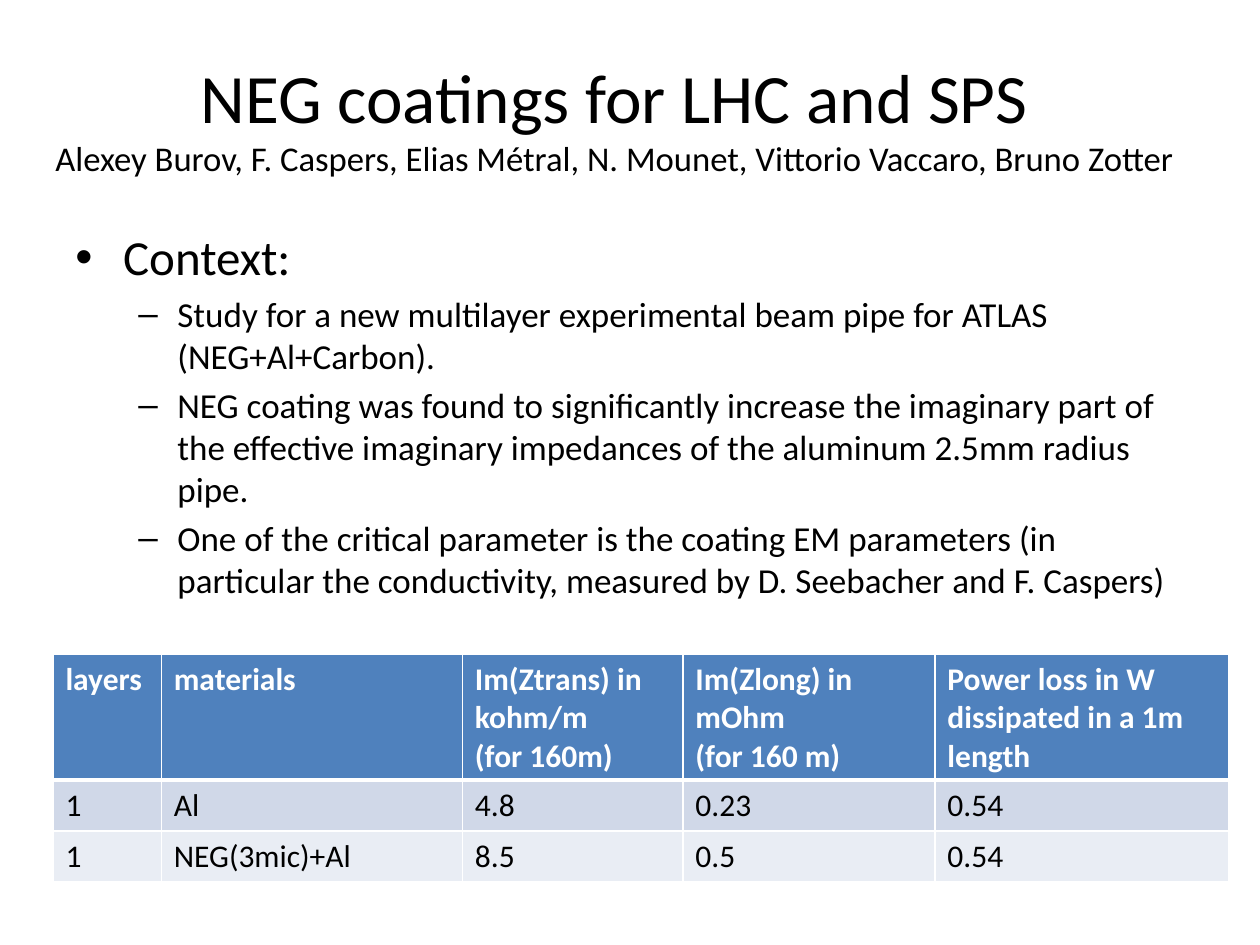
import dataclasses

import pptx
import pptx.dml.color
import pptx.enum.text
import pptx.oxml
import pptx.oxml.ns
import pptx.util

ALIGN = pptx.enum.text.PP_ALIGN
ANCHOR = pptx.enum.text.MSO_ANCHOR


@dataclasses.dataclass(frozen=True)
class Theme:
    font: str = "Calibri"
    ink: str = "000000"
    white: str = "FFFFFF"
    header: str = "4F81BD"
    bands: tuple = ("D0D8E8", "E9EDF4")
    title_size: float = 39.6
    authors_size: float = 19.8
    heading_size: float = 28
    body_size: float = 20
    table_size: float = 18
    thin_line: float = 1
    thick_line: float = 3


def write_text(paragraph, text, *, font, size, color, bold=False, align=None):
    """Add text to a paragraph; each newline becomes a line break."""
    if align is not None:
        paragraph.alignment = align
    for index, line in enumerate(text.split("\n")):
        if index:
            paragraph.add_line_break()
        run = paragraph.add_run()
        run.text = line
        run.font.name = font
        run.font.size = pptx.util.Pt(size)
        run.font.bold = bold
        run.font.color.rgb = pptx.dml.color.RGBColor.from_string(color)


class SlideBuilder:
    """Places elements on a grid of 40 columns by 30 rows."""

    columns, rows = 40, 30

    def __init__(self, presentation, theme):
        self.theme = theme
        self.column = presentation.slide_width / self.columns
        self.row = presentation.slide_height / self.rows
        self.slide = presentation.slides.add_slide(presentation.slide_layouts[6])

    def place(self, left, top, width, height):
        return (round(left * self.column), round(top * self.row),
                round(width * self.column), round(height * self.row))

    def text_frame(self, area, anchor):
        frame = self.slide.shapes.add_textbox(*self.place(*area)).text_frame
        frame.word_wrap = True
        frame.vertical_anchor = anchor
        return frame

    def title(self, area, title, authors):
        theme = self.theme
        paragraph = self.text_frame(area, ANCHOR.MIDDLE).paragraphs[0]
        write_text(paragraph, title, font=theme.font, size=theme.title_size,
                   color=theme.ink, align=ALIGN.CENTER)
        paragraph.add_line_break()
        write_text(paragraph, authors, font=theme.font, size=theme.authors_size,
                   color=theme.ink)

    def bullets(self, area, heading, points):
        theme = self.theme
        frame = self.text_frame(area, ANCHOR.TOP)
        self.bullet(frame.paragraphs[0], heading, theme.heading_size, "•", 0.38, 0.38)
        for point in points:
            paragraph = frame.add_paragraph()
            paragraph.level = 1
            self.bullet(paragraph, point, theme.body_size, "–", 0.81, 0.31)

    def bullet(self, paragraph, text, size, mark, margin, hanging):
        paragraph.space_before = pptx.util.Pt(size * 0.2)
        write_text(paragraph, text, font=self.theme.font, size=size, color=self.theme.ink)
        properties = paragraph._p.get_or_add_pPr()
        properties.set("marL", str(pptx.util.Inches(margin)))
        properties.set("indent", str(-pptx.util.Inches(hanging)))
        namespace = pptx.oxml.ns.nsdecls("a")
        for xml in (f'<a:buFont {namespace} typeface="Arial"/>',
                    f'<a:buChar {namespace} char="{mark}"/>'):
            properties.append(pptx.oxml.parse_xml(xml))

    def table(self, left, top, widths, heights, records):
        area = self.place(left, top, sum(widths), sum(heights))
        table = self.slide.shapes.add_table(len(records), len(widths), *area).table
        for column, width in zip(table.columns, widths):
            column.width = round(width * self.column)
        for row, height in zip(table.rows, heights):
            row.height = round(height * self.row)
        for row_index, record in enumerate(records):
            for column_index, text in enumerate(record):
                self.cell(table.cell(row_index, column_index), text, row_index)

    def cell(self, cell, text, row_index):
        theme = self.theme
        is_header = row_index == 0
        write_text(cell.text_frame.paragraphs[0], text, font=theme.font,
                   size=theme.table_size, bold=is_header,
                   color=theme.white if is_header else theme.ink)
        # The rule between header and body is thicker
        widths = dict.fromkeys("LRTB", theme.thin_line)
        if row_index < 2:
            widths["B" if is_header else "T"] = theme.thick_line
        properties = cell._tc.get_or_add_tcPr()
        for side, width in widths.items():
            properties.append(pptx.oxml.parse_xml(
                f'<a:ln{side} {pptx.oxml.ns.nsdecls("a")} w="{pptx.util.Pt(width)}">'
                f'<a:solidFill><a:srgbClr val="{theme.white}"/></a:solidFill></a:ln{side}>'))
        fill = theme.header if is_header else theme.bands[(row_index - 1) % 2]
        cell.fill.solid()
        cell.fill.fore_color.rgb = pptx.dml.color.RGBColor.from_string(fill)


def main():
    presentation = pptx.Presentation()
    presentation.slide_width = pptx.util.Inches(10)
    presentation.slide_height = pptx.util.Inches(7.5)
    builder = SlideBuilder(presentation, Theme())

    # Title and authors
    builder.title(
        (1, 1.2, 37, 5), "NEG coatings for LHC and SPS",
        "Alexey Burov, F. Caspers, Elias Métral, N. Mounet, Vittorio Vaccaro, Bruno Zotter")

    # Context
    builder.bullets((2, 7, 36, 19.8), "Context:", [
        "Study for a new multilayer experimental beam pipe for ATLAS (NEG+Al+Carbon).",
        "NEG coating was found to significantly increase the imaginary part of the "
        "effective imaginary impedances of the aluminum 2.5mm radius pipe.",
        "One of the critical parameter is the coating EM parameters (in particular the "
        "conductivity, measured by D. Seebacher and F. Caspers)",
    ])

    # Impedance table
    builder.table(1.68, 20.76, (3.44, 9.56, 7, 8, 9.32), (4, 1.62, 1.62), [
        ("layers", "materials", "Im(Ztrans) in kohm/m\n(for 160m)",
         "Im(Zlong) in mOhm\n(for 160 m)", "Power loss in W dissipated in a 1m length"),
        ("1", "Al", "4.8", "0.23", "0.54"),
        ("1", "NEG(3mic)+Al", "8.5", "0.5", "0.54"),
    ])

    presentation.save("out.pptx")


if __name__ == "__main__":
    main()
